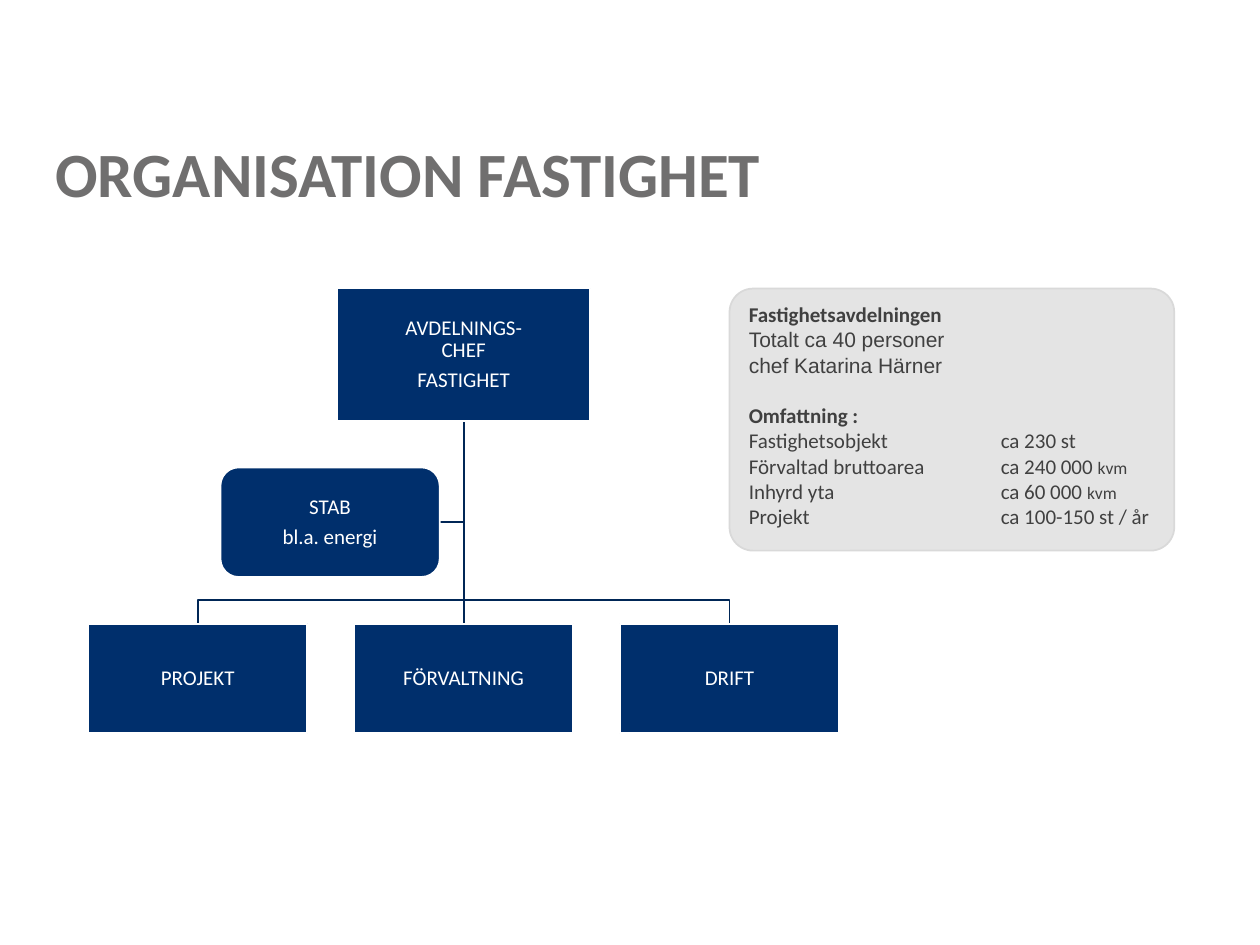
import pptx
import pptx.util
import pptx.dml.color
import pptx.enum.shapes
import pptx.enum.text
import pptx.oxml.ns
import lxml.etree

COLORS = {
    "title": "706F6F",
    "navy": "002F6C",
    "connector": "002656",
    "white": "FFFFFF",
    "panel": "E4E4E4",
    "panel_edge": "D9D9D9",
    "panel_text": "404040",
}
inches = pptx.util.Inches
SHAPE = pptx.enum.shapes.MSO_SHAPE
ALIGN = pptx.enum.text.PP_ALIGN
ANCHOR = pptx.enum.text.MSO_ANCHOR

UNIT_WIDTH, UNIT_HEIGHT = 1.74, 0.87
COLUMN_LEFT, COLUMN_STEP = 0.7, 2.11
CHIEF_TOP, CHIEF_WIDTH, CHIEF_HEIGHT = 2.29, 2.01, 1.05
CHIEF_BOTTOM = CHIEF_TOP + CHIEF_HEIGHT
STAFF_LEFT, STAFF_TOP = 1.75, 3.71
UNIT_TOP = 4.95
BUS_Y = 4.76
UNITS = ["PROJEKT", "FÖRVALTNING", "DRIFT"]
SCOPE = [
    ("Fastighetsobjekt\tca 230 st", ""),
    ("Förvaltad bruttoarea\tca 240 000 ", "kvm"),
    ("Inhyrd yta\tca 60 000 ", "kvm"),
    ("Projekt\tca 100-150 st / år", ""),
]


def rgb(name):
    return pptx.dml.color.RGBColor.from_string(COLORS[name])


def column_center(column):
    return COLUMN_LEFT + column * COLUMN_STEP + UNIT_WIDTH / 2


def add_tab(para, position):
    properties = para._p.get_or_add_pPr()
    tabs = lxml.etree.SubElement(properties, pptx.oxml.ns.qn("a:tabLst"))
    tab = lxml.etree.SubElement(tabs, pptx.oxml.ns.qn("a:tab"))
    tab.set("pos", str(inches(position)))
    tab.set("algn", "l")


def add_span(para, text, size=12, color="white", bold=False, font="Calibri"):
    for number, line in enumerate(text.split("\n")):
        if number:
            para.add_line_break()
        span = para.add_run()
        span.text = line
        span.font.size = pptx.util.Pt(size)
        span.font.name = font
        span.font.bold = bold
        span.font.color.rgb = rgb(color)


def add_para(frame, text, align=ALIGN.LEFT, spacing=None, before=0, after=0, tab=None, **style):
    para = frame.paragraphs[0]
    if para.runs:
        para = frame.add_paragraph()
    para.alignment = align
    para.line_spacing = spacing
    para.space_before = pptx.util.Pt(before)
    para.space_after = pptx.util.Pt(after)
    if tab:
        add_tab(para, tab)
    add_span(para, text, **style)
    return para


def add_title(page, text):
    box = page.shapes.add_textbox(inches(0.34), inches(0.99), inches(9.17), inches(0.75))
    box.text_frame.word_wrap = True
    box.text_frame.vertical_anchor = ANCHOR.MIDDLE
    add_para(box.text_frame, text, size=36, color="title", bold=True)


def add_box(page, kind, left, top, width, height, fill="navy", edge="white"):
    box = page.shapes.add_shape(kind, inches(left), inches(top), inches(width), inches(height))
    box.shadow.inherit = False
    box.fill.solid()
    box.fill.fore_color.rgb = rgb(fill)
    box.line.color.rgb = rgb(edge)
    box.line.width = pptx.util.Pt(1)
    box.text_frame.word_wrap = True
    return box


def add_unit(page, texts, left, top, width=UNIT_WIDTH, height=UNIT_HEIGHT, kind=SHAPE.RECTANGLE):
    frame = add_box(page, kind, left, top, width, height).text_frame
    frame.vertical_anchor = ANCHOR.MIDDLE
    frame.margin_left = frame.margin_right = inches(0.01)
    frame.margin_top = frame.margin_bottom = inches(0.01)
    for text in texts:
        add_para(frame, text, align=ALIGN.CENTER, spacing=0.9, after=4.2)


def add_elbow(page, points):
    start, *rest = [(inches(x), inches(y)) for x, y in points]
    builder = page.shapes.build_freeform(*start)
    builder.add_line_segments(rest, close=False)
    elbow = builder.convert_to_shape()
    elbow.shadow.inherit = False
    elbow.fill.background()
    elbow.line.color.rgb = rgb("connector")
    elbow.line.width = pptx.util.Pt(1)


def add_straight(page, start, end):
    points = [inches(value) for value in (*start, *end)]
    line = page.shapes.add_connector(pptx.enum.shapes.MSO_CONNECTOR.STRAIGHT, *points)
    line.line.color.rgb = rgb("connector")
    line.line.width = pptx.util.Pt(1)
    lxml.etree.SubElement(line._element.spPr, pptx.oxml.ns.qn("a:effectLst"))


def add_chart_tree(page):
    middle = column_center(1)
    trunk = (middle, CHIEF_BOTTOM)
    staff_y = STAFF_TOP + UNIT_HEIGHT / 2
    add_elbow(page, [trunk, (middle, staff_y), (STAFF_LEFT + UNIT_WIDTH, staff_y)])
    for column in (2, 0):
        center = column_center(column)
        add_elbow(page, [trunk, (middle, BUS_Y), (center, BUS_Y), (center, UNIT_TOP)])
    add_straight(page, trunk, (middle, UNIT_TOP))
    add_unit(page, ["AVDELNINGS-\nCHEF", "FASTIGHET"], middle - CHIEF_WIDTH / 2,
             CHIEF_TOP, CHIEF_WIDTH, CHIEF_HEIGHT)
    for column, name in enumerate(UNITS):
        add_unit(page, [name], COLUMN_LEFT + column * COLUMN_STEP, UNIT_TOP)
    add_unit(page, ["STAB", "bl.a. energi"], STAFF_LEFT, STAFF_TOP, kind=SHAPE.ROUNDED_RECTANGLE)


def add_facts(page):
    panel = add_box(page, SHAPE.ROUNDED_RECTANGLE, column_center(2), CHIEF_TOP, 3.53, 2.08,
                    fill="panel", edge="panel_edge")
    panel.adjustments[0] = 0.09
    frame = panel.text_frame
    frame.vertical_anchor = ANCHOR.TOP
    add_para(frame, "Fastighetsavdelningen", color="panel_text", bold=True)
    add_para(frame, "Totalt ca 40 personer\nchef Katarina Härner", color="panel_text", font="Arial")
    add_para(frame, "Omfattning :", before=14.5, color="panel_text", bold=True)
    for text, measure in SCOPE:
        para = add_para(frame, text, tab=2, color="panel_text")
        if measure:
            add_span(para, measure, size=10, color="panel_text")


def main():
    deck = pptx.Presentation()
    deck.slide_width = inches(10)
    deck.slide_height = inches(7.5)
    page = deck.slides.add_slide(deck.slide_layouts[6])
    add_title(page, "ORGANISATION FASTIGHET")
    add_chart_tree(page)
    add_facts(page)
    deck.save("out.pptx")


if __name__ == "__main__":
    main()
